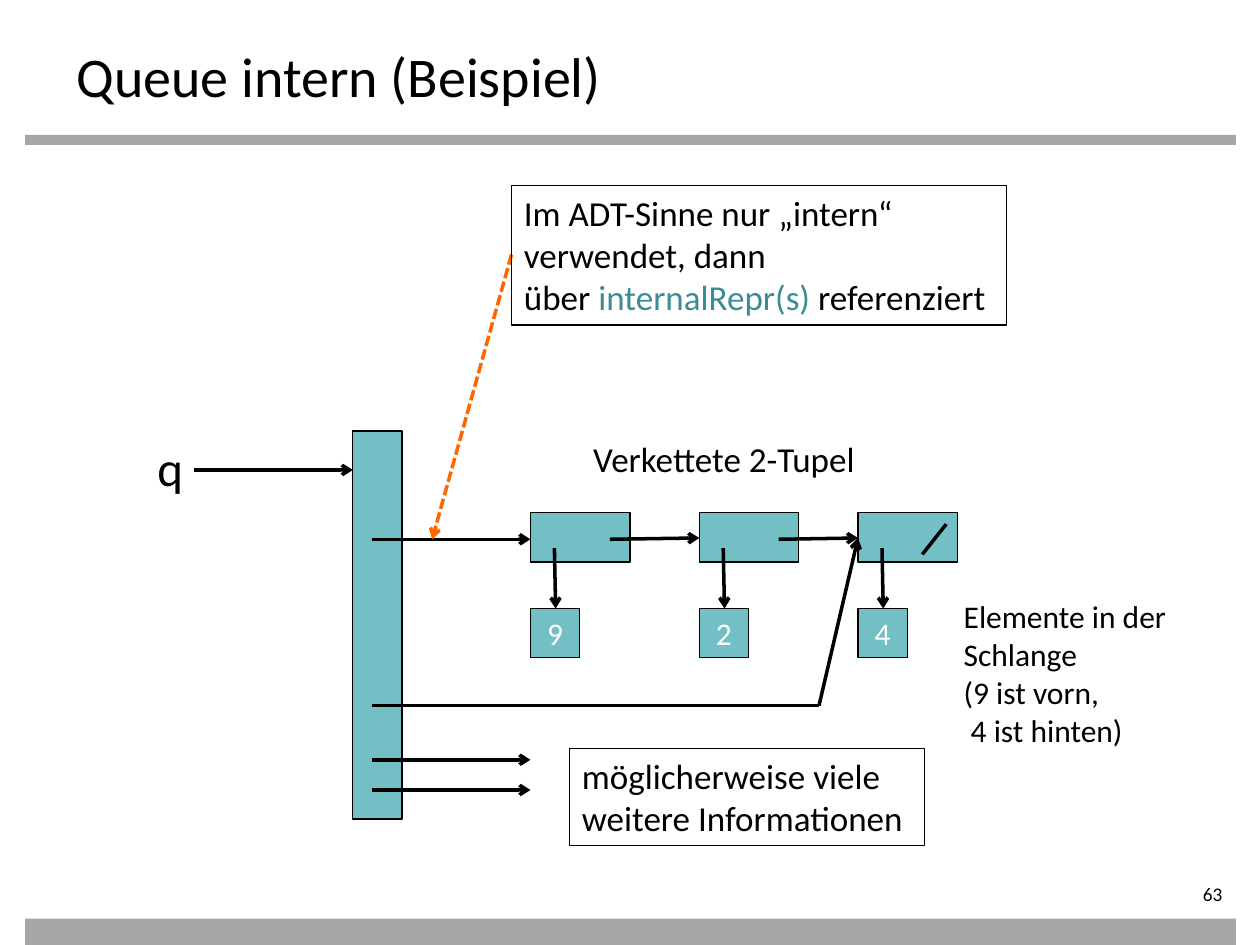
import pptx
import pptx.util
import pptx.dml.color
import pptx.enum.dml
import pptx.enum.shapes
import pptx.enum.text
import pptx.oxml

COLORS = {
    "ink": "000000",
    "paper": "FFFFFF",
    "bar": "A6A6A6",
    "cell": "72BFC5",
    "code": "3C8C93",
    "hint": "FF6600",
}
COLUMNS, ROWS = 100, 75
ALIGN = pptx.enum.text.PP_ALIGN
ANCHOR = pptx.enum.text.MSO_ANCHOR


class Sketch:
    """Draws styled elements on one slide, placed by grid columns and rows."""

    def __init__(self, deck):
        self.page = deck.slides.add_slide(deck.slide_layouts[6])
        self.column = deck.slide_width / COLUMNS
        self.row = deck.slide_height / ROWS
        self.font = "Calibri"

    def place(self, *lengths):
        steps = (self.column, self.row) * 2
        return [round(length * step) for length, step in zip(lengths, steps)]

    def color(self, name):
        return pptx.dml.color.RGBColor.from_string(COLORS[name])

    def style(self, para, size, color, align):
        para.alignment = align
        for span in para.runs:
            span.font.name = self.font
            span.font.size = pptx.util.Pt(size)
            span.font.color.rgb = self.color(color)

    def outline(self, shape):
        shape.line.color.rgb = self.color("ink")
        shape.line.width = pptx.util.Pt(0.75)

    def block(self, area, fill="cell", outlined=True, label=""):
        kind = pptx.enum.shapes.MSO_SHAPE.RECTANGLE
        shape = self.page.shapes.add_shape(kind, *self.place(*area))
        shape.shadow.inherit = False
        shape.fill.solid()
        shape.fill.fore_color.rgb = self.color(fill)
        if outlined:
            self.outline(shape)
        else:
            shape.line.fill.background()
        if label:
            shape.text_frame.text = label
            shape.text_frame.vertical_anchor = ANCHOR.MIDDLE
            self.style(shape.text_frame.paragraphs[0], 18, "paper", ALIGN.CENTER)

    def text(self, area, words, size, framed=False, wrap=False, align=ALIGN.LEFT):
        box = self.page.shapes.add_textbox(*self.place(*area))
        box.text_frame.text = words
        box.text_frame.word_wrap = wrap
        for para in box.text_frame.paragraphs:
            self.style(para, size, "ink", align)
        if framed:
            self.outline(box)
        return box

    def line(self, start, end, color="ink", arrow=True, dashed=False):
        kind = pptx.enum.shapes.MSO_CONNECTOR.STRAIGHT
        link = self.page.shapes.add_connector(kind, *self.place(*start, *end))
        link.line.color.rgb = self.color(color)
        link.line.width = pptx.util.Pt(2)
        if dashed:
            link.line.dash_style = pptx.enum.dml.MSO_LINE.SQUARE_DOT
        namespace = pptx.oxml.ns.nsdecls("a")
        if arrow:
            head = pptx.oxml.parse_xml(f'<a:tailEnd {namespace} type="arrow"/>')
            link.line._get_or_add_ln().append(head)
        effects = pptx.oxml.parse_xml(f"<a:effectLst {namespace}/>")
        link._element.spPr.append(effects)


def draw_frame(sketch):
    """Draw the bars, the title and the page number."""
    for top, height in ((10.7, 0.8), (72.9, 2.1)):
        sketch.block((2, top, 96.1, height), fill="bar", outlined=False)
    sketch.text((5.1, 2.8, 90, 5.5), "Queue intern (Beispiel)", 32, wrap=True)
    number = sketch.text((87, 70, 11, 2.2), "63", 11, wrap=True, align=ALIGN.RIGHT)
    frame = number.text_frame
    frame.margin_left = frame.margin_top = frame.margin_bottom = 0


def draw_queue(sketch):
    """Draw the queue record, its linked tuples and their elements."""
    sketch.text((11.5, 34.2, 4.2, 5.7), "q", 28)
    sketch.block((28, 34.2, 3.9, 30.8))
    sketch.line((15.4, 37.3), (28, 37.3))
    for level in (42.8, 60.3, 62.7):
        sketch.line((29.5, level), (42.1, level))

    lefts = (42.1, 55.5, 68.1)
    for left, element in zip(lefts, "924"):
        sketch.block((left, 40.7, 7.9, 3.9))
        sketch.block((left, 48.3, 3.9, 3.9), label=element)
        sketch.line((left + 1.9, 43.5), (left + 2, 48.3))
    for left, following in zip(lefts, lefts[1:]):
        sketch.line((left + 6.3, 42.8), (following, 42.7))

    sketch.line((75.1, 41.6), (73.2, 44), arrow=False)
    sketch.line((29.5, 56), (65, 56), arrow=False)
    sketch.line((65, 56), (lefts[-1], 42.7))


def draw_notes(sketch):
    """Draw the explanations around the queue."""
    sketch.text((46.1, 34.2, 23.7, 4.4), "Verkettete 2-Tupel", 20)
    sketch.line((40.6, 20.2), (34.3, 42.8), color="hint", dashed=True)
    words = "Im ADT-Sinne nur „intern“\nverwendet, dann\nüber "
    usage = sketch.text((40.6, 14.7, 39.3, 11.1), words, 20, framed=True)
    para = usage.text_frame.paragraphs[-1]
    for part in ("internalRepr(s)", " referenziert"):
        para.add_run().text = part
    sketch.style(para, 20, "ink", ALIGN.LEFT)
    para.runs[1].font.color.rgb = sketch.color("code")

    words = "möglicherweise viele\vweitere Informationen"
    sketch.text((45.2, 59.4, 28.2, 7.7), words, 20, framed=True)
    words = "Elemente in der\vSchlange\v(9 ist vorn,\v 4 ist hinten)"
    sketch.text((75.5, 46.9, 18.6, 13.1), words, 18)


def main():
    """Build and save the slide."""
    deck = pptx.Presentation()
    deck.slide_width = pptx.util.Inches(10)
    deck.slide_height = pptx.util.Inches(7.5)
    sketch = Sketch(deck)
    draw_frame(sketch)
    draw_queue(sketch)
    draw_notes(sketch)
    deck.save("out.pptx")


if __name__ == "__main__":
    main()
